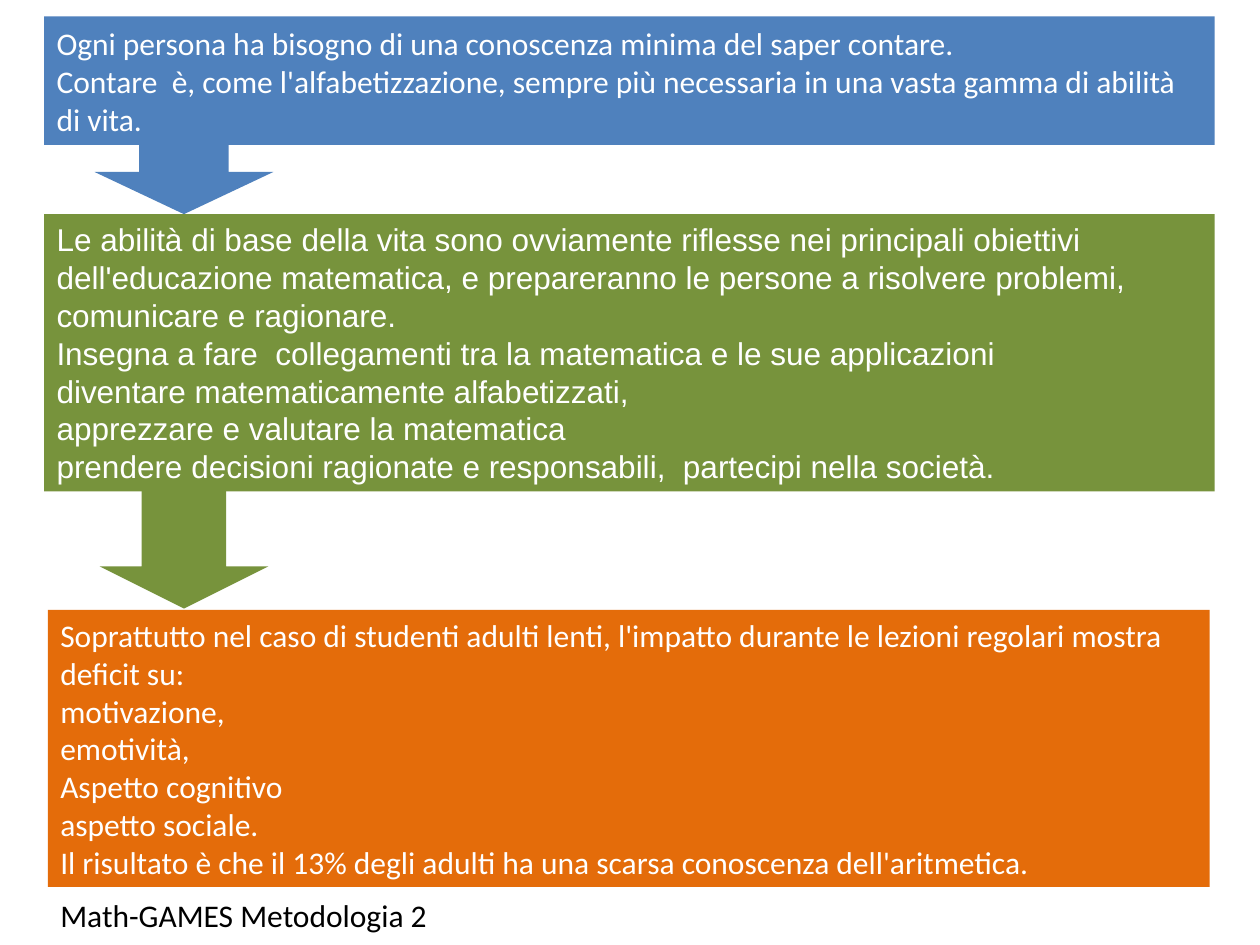
import pptx
import pptx.dml.color
import pptx.enum.shapes
import pptx.enum.text
import pptx.util

Inches = pptx.util.Inches
Shape = pptx.enum.shapes.MSO_SHAPE
Anchor = pptx.enum.text.MSO_ANCHOR

COLOURS = {
    "blue": "4F81BD",
    "green": "77933C",
    "orange": "E46C0A",
    "white": "FFFFFF",
    "black": "000000",
}

NEED = [
    "Ogni persona ha bisogno di una conoscenza minima del saper contare.",
    "Contare  è, come l'alfabetizzazione, sempre più necessaria in una vasta gamma di abilità di vita.",
]
GOALS = [
    "Le abilità di base della vita sono ovviamente riflesse nei principali obiettivi dell'educazione matematica, e prepareranno le persone a risolvere problemi,",
    "comunicare e ragionare.",
    "Insegna a fare  collegamenti tra la matematica e le sue applicazioni",
    "diventare matematicamente alfabetizzati,",
    "apprezzare e valutare la matematica",
    "prendere decisioni ragionate e responsabili,  partecipi nella società.",
]
DEFICITS = [
    "Soprattutto nel caso di studenti adulti lenti, l'impatto durante le lezioni regolari mostra deficit su:",
    "motivazione,",
    "emotività,",
    "Aspetto cognitivo",
    "aspetto sociale.",
    "Il risultato è che il 13% degli adulti ha una scarsa conoscenza dell'aritmetica.",
]


class SlideBuilder:
    size = pptx.util.Pt(18)

    def __init__(self, page):
        self.page = page

    def colour(self, name):
        return pptx.dml.color.RGBColor.from_string(COLOURS[name])

    def shape(self, kind, left, top, width, height, fill):
        shape = self.page.shapes.add_shape(
            kind, Inches(left), Inches(top), Inches(width), Inches(height))
        shape.shadow.inherit = False
        shape.fill.solid()
        shape.fill.fore_color.rgb = self.colour(fill)
        shape.line.fill.background()
        return shape

    def set_text(self, box, lines, font, colour, anchor):
        frame = box.text_frame
        frame.word_wrap = True
        frame.vertical_anchor = anchor
        for index, line in enumerate(lines):
            para = frame.paragraphs[0] if index == 0 else frame.add_paragraph()
            para.text = line
            para.alignment = pptx.enum.text.PP_ALIGN.LEFT
            para.font.name = font
            para.font.size = self.size
            para.font.color.rgb = self.colour(colour)

    def arrow(self, left, top, width, height, fill):
        arrow = self.shape(Shape.DOWN_ARROW, left, top, width, height, fill)
        arrow.adjustments[0] = 0.5
        arrow.adjustments[1] = 0.25

    def panel(self, left, top, width, height, fill, lines, font="Calibri", anchor=Anchor.TOP):
        box = self.shape(Shape.RECTANGLE, left, top, width, height, fill)
        self.set_text(box, lines, font, "white", anchor)

    def caption(self, left, top, width, height, text):
        box = self.page.shapes.add_textbox(
            Inches(left), Inches(top), Inches(width), Inches(height))
        self.set_text(box, [text], "Calibri", "black", Anchor.TOP)


def main():
    deck = pptx.Presentation()
    deck.slide_width = Inches(10)
    deck.slide_height = Inches(7.5)
    builder = SlideBuilder(deck.slides.add_slide(deck.slide_layouts[6]))

    builder.arrow(0.79, 3.49, 1.34, 1.34, "green")
    builder.arrow(0.75, 0.36, 1.42, 1.34, "blue")
    builder.panel(0.35, 0.13, 9.29, 1.02, "blue", NEED, anchor=Anchor.MIDDLE)
    builder.panel(0.35, 1.7, 9.29, 2.2, "green", GOALS, font="Arial")
    builder.panel(0.38, 4.84, 9.22, 2.2, "orange", DEFICITS)
    builder.caption(0.38, 7.06, 5.05, 0.4, "Math-GAMES Metodologia 2")

    deck.save("out.pptx")


if __name__ == "__main__":
    main()
